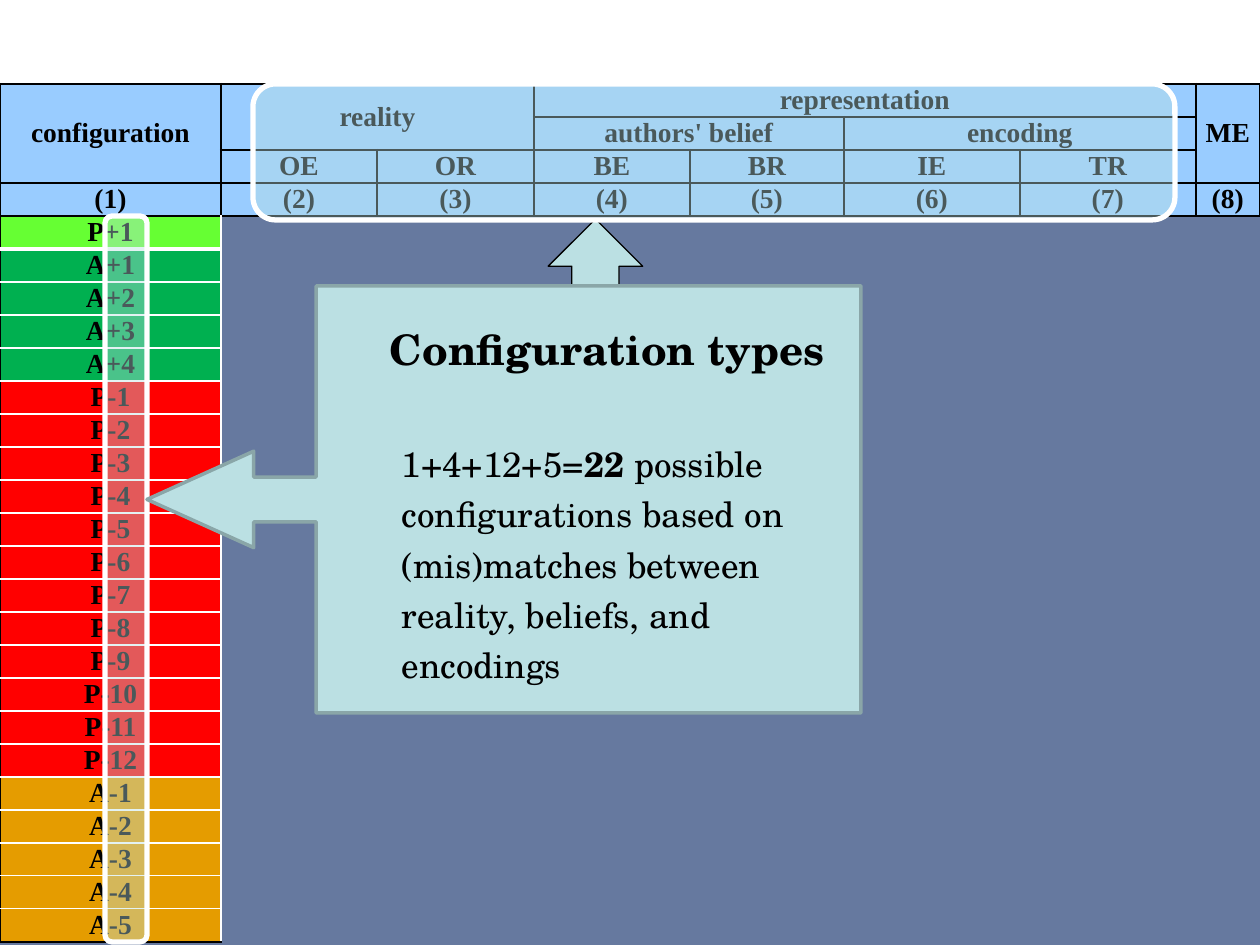
from dataclasses import dataclass

from lxml import etree
from pptx import Presentation
from pptx.dml.color import RGBColor
from pptx.enum.shapes import MSO_SHAPE
from pptx.enum.text import MSO_ANCHOR, PP_ALIGN
from pptx.oxml.ns import qn
from pptx.util import Emu, Pt

RECT = MSO_SHAPE.RECTANGLE
ROUND_RECT = MSO_SHAPE.ROUNDED_RECTANGLE
UP_CALLOUT = MSO_SHAPE.UP_ARROW_CALLOUT
LEFT_CALLOUT = MSO_SHAPE.LEFT_ARROW_CALLOUT
MIDDLE = MSO_ANCHOR.MIDDLE
CENTER, LEFT = PP_ALIGN.CENTER, PP_ALIGN.LEFT


@dataclass(frozen=True)
class Theme:
    serif: str = "Times New Roman"
    school: str = "TeX Gyre Schola"
    black: str = "000000"
    white: str = "FFFFFF"
    navy: str = "002060"
    header: str = "99CCFF"
    callout: str = "BBE0E3"
    callout_edge: str = "8AA6A8"
    lime: str = "66FF33"
    green: str = "00B050"
    red: str = "FF0000"
    orange: str = "E59C00"
    cell_size: float = 15.7
    title_size: int = 24
    body_size: int = 20


T = Theme()
ROW = 33
COLS = [221, 156, 157, 156, 154, 176, 176, 64]
# (row, column, text, rows spanned, columns spanned)
HEADINGS = [
    (0, 0, "configuration", 3, 1), (0, 1, "reality", 2, 2),
    (0, 3, "representation", 1, 4), (0, 7, "ME", 3, 1),
    (1, 3, "authors' belief", 1, 2), (1, 5, "encoding", 1, 2),
    *[(2, c, s, 1, 1) for c, s in enumerate(["OE", "OR", "BE", "BR", "IE", "TR"], 1)],
    *[(3, c, f"({c + 1})", 1, 1) for c in range(8)],
]
# (prefix, count, fill)
GROUPS = [("P+", 1, T.lime), ("A+", 4, T.green), ("P-", 12, T.red), ("A-", 5, T.orange)]


def px(n):
    return Emu(round(n * 914400 / 126))


def rgb(color):
    return RGBColor.from_string(color)


def style_font(font, name, size, bold):
    font.name, font.size, font.bold = name, Pt(size), bold
    font.color.rgb = rgb(T.black)


def add_shape(slide, kind, box, fill, opacity=100, line=None):
    sp = slide.shapes.add_shape(kind, *map(px, box))
    sp.shadow.inherit = False
    sp.fill.solid()
    sp.fill.fore_color.rgb = rgb(fill)
    if opacity < 100:
        color = sp.fill._xPr.find(qn("a:solidFill"))[0]
        etree.SubElement(color, qn("a:alpha"), val=str(opacity * 1000))
    if line:
        sp.line.color.rgb = rgb(line[0])
        sp.line.width = Pt(line[1])
    else:
        sp.line.fill.background()
    return sp


def add_table(slide, left, top, widths, rows):
    box = (left, top, sum(widths), rows * ROW)
    table = slide.shapes.add_table(rows, len(widths), *map(px, box)).table
    table.first_row = table.horz_banding = False
    for column, width in zip(table.columns, widths):
        column.width = px(width)
    for row in table.rows:
        row.height = px(ROW)
    return table


def style_cell(cell, fill, borders):
    """Set borders, given as (colour, points) for left, right, top and bottom, then the fill."""
    tc_pr = cell._tc.get_or_add_tcPr()
    for side, (color, width) in zip("LRTB", borders):
        ln = etree.SubElement(tc_pr, qn(f"a:ln{side}"), w=str(int(Pt(width))))
        solid = etree.SubElement(ln, qn("a:solidFill"))
        etree.SubElement(solid, qn("a:srgbClr"), val=color)
    cell.fill.solid()
    cell.fill.fore_color.rgb = rgb(fill)
    cell.margin_left = cell.margin_right = cell.margin_top = cell.margin_bottom = 0
    cell.vertical_anchor = MIDDLE
    p = cell.text_frame.paragraphs[0]
    p.alignment = CENTER
    style_font(p.font, T.serif, T.cell_size, True)


def write_cell(cell, text):
    cell.text_frame.paragraphs[0].add_run().text = text


def header_table(slide, left, top):
    table = add_table(slide, left, top, COLS, 4)
    for cell in table.iter_cells():
        style_cell(cell, T.header, [(T.black, 1.5)] * 4)
    for row, col, text, down, across in HEADINGS:
        cell = table.cell(row, col)
        if down * across > 1:
            cell.merge(table.cell(row + down - 1, col + across - 1))
        write_cell(cell, text)


def configuration_table(slide, left, top):
    entries = [(f"{prefix}{n}", fill) for prefix, count, fill in GROUPS
               for n in range(1, count + 1)]
    edge, thin, thick = (T.black, 1.5), (T.white, 1), (T.white, 3)
    rules = [edge, thick] + [thin] * (len(entries) - 2) + [edge]
    table = add_table(slide, left, top, COLS[:1], len(entries))
    for i, (text, fill) in enumerate(entries):
        cell = table.cell(i, 0)
        style_cell(cell, fill, [edge, thin, rules[i], rules[i + 1]])
        write_cell(cell, text)


def highlight(slide, box):
    add_shape(slide, ROUND_RECT, box, T.callout, 40, (T.white, 3))


def explanation(slide, box):
    sp = add_shape(slide, LEFT_CALLOUT, box, T.callout, line=(T.callout_edge, 2))
    for i, value in enumerate([0.105, 0.113, 0.25, 0.763]):
        sp.adjustments[i] = value
    tf = sp.text_frame
    tf.word_wrap = True
    tf.vertical_anchor = MIDDLE
    title, body = tf.paragraphs[0], tf.add_paragraph()
    for p, align, indent in [(title, CENTER, 37), (body, LEFT, 73)]:
        p.alignment = align
        p.line_spacing = 1.2
        p._p.get_or_add_pPr().set("marL", str(px(indent)))
    body.space_before = Pt(34.5)
    style_font(title.font, T.school, T.title_size, True)
    title.add_run().text = "Configuration types"
    for text, bold in [
        ("1+4+12+5=", False), ("22", True),
        (" possible configurations based on (mis)matches between "
         "reality, beliefs, and encodings", False),
    ]:
        r = body.add_run()
        r.text = text
        style_font(r.font, T.school, T.body_size, bold)


def main():
    prs = Presentation()
    prs.slide_width, prs.slide_height = px(1260), px(945)
    slide = prs.slides.add_slide(prs.slide_layouts[6])
    top = 84
    list_top = top + 4 * ROW
    add_shape(slide, RECT, (0, top, 1260, 861), T.navy, 60)
    add_shape(slide, UP_CALLOUT, (501, 219, 189, 199), T.callout, line=(T.black, 0.75))
    header_table(slide, 0, top)
    configuration_table(slide, 0, list_top)
    highlight(slide, (105, list_top, 42, 22 * ROW))
    explanation(slide, (147, 286, 714, 427))
    highlight(slide, (253, top, 922, 136))
    prs.save("out.pptx")


if __name__ == "__main__":
    main()
